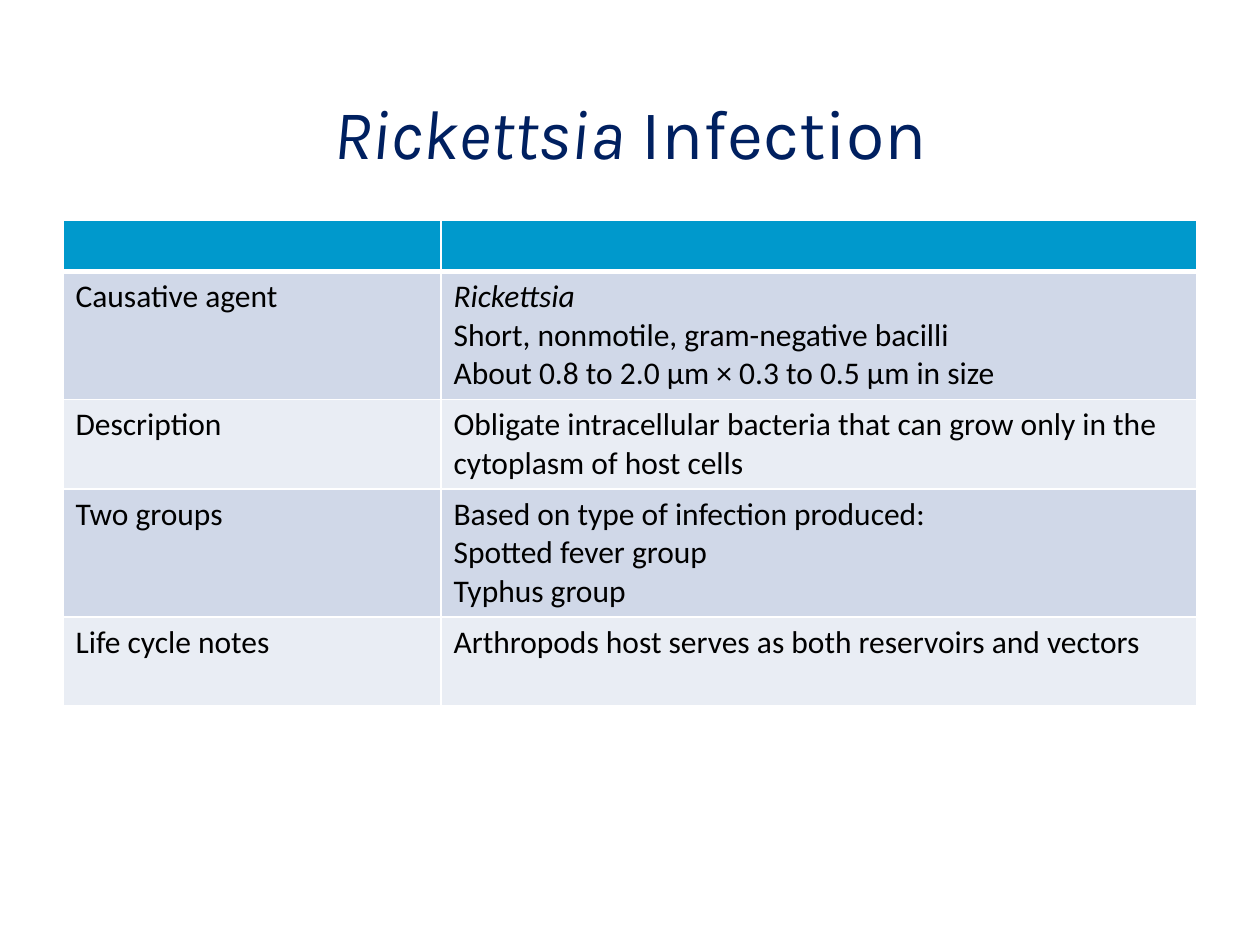
from dataclasses import dataclass

from lxml import etree
from pptx import Presentation
from pptx.dml.color import RGBColor
from pptx.enum import text
from pptx.oxml import ns
from pptx.util import Pt


@dataclass(frozen=True)
class Theme:
    title_font: str = "Karla"
    body_font: str = "Calibri"
    title_size: float = 40
    body_size: float = 18
    title_color: str = "002060"
    body_color: str = "000000"
    header_fill: str = "0099CC"
    band_fills: tuple[str, str] = ("D0D8E8", "E9EDF4")
    border_color: str = "FFFFFF"
    border_width: float = 1
    header_rule_width: float = 3


@dataclass(frozen=True)
class Fact:
    label: str
    lines: tuple[str, ...]
    height: float
    italic_first: bool = False


THEME = Theme()
HEADER_HEIGHT = 29.2
COLUMN_WIDTHS = (216, 432)
FACTS = (
    Fact("Causative agent",
         ("Rickettsia", "Short, nonmotile, gram-negative bacilli",
          "About 0.8 to 2.0 μm × 0.3 to 0.5 μm in size"), 72, italic_first=True),
    Fact("Description",
         ("Obligate intracellular bacteria that can grow only in the "
          "cytoplasm of host cells",), 50.4),
    Fact("Two groups",
         ("Based on type of infection produced:", "Spotted fever group",
          "Typhus group"), 72),
    Fact("Life cycle notes",
         ("Arthropods host serves as both reservoirs and vectors",), 50.4),
)


def style_font(font, name: str, size: float, color: str) -> None:
    font.name = name
    font.size = Pt(size)
    font.color.rgb = RGBColor.from_string(color)


def add_title(slide) -> None:
    title = slide.shapes.title
    title.left, title.top, title.width, title.height = Pt(54), Pt(0), Pt(612), Pt(150)
    title.text_frame.vertical_anchor = text.MSO_ANCHOR.MIDDLE
    paragraph = title.text_frame.paragraphs[0]
    paragraph.alignment = text.PP_ALIGN.CENTER
    for wording, italic in (("Rickettsia", True), (" Infection", False)):
        run = paragraph.add_run()
        run.text = wording
        run.font.italic = italic
    style_font(paragraph.font, THEME.title_font, THEME.title_size, THEME.title_color)
    for run in paragraph.runs:
        style_font(run.font, THEME.title_font, THEME.title_size, THEME.title_color)


def format_cell(cell, fill: str, top: float, bottom: float) -> None:
    properties = cell._tc.get_or_add_tcPr()
    side = THEME.border_width
    for tag, width in (("lnL", side), ("lnR", side), ("lnT", top), ("lnB", bottom)):
        line = etree.SubElement(properties, ns.qn(f"a:{tag}"), w=str(Pt(width)))
        solid = etree.SubElement(line, ns.qn("a:solidFill"))
        etree.SubElement(solid, ns.qn("a:srgbClr"), val=THEME.border_color)
    cell.fill.solid()
    cell.fill.fore_color.rgb = RGBColor.from_string(fill)


def write_cell(cell, lines: tuple[str, ...], italic_first: bool = False) -> None:
    cell.text = "\n".join(lines)
    for index, paragraph in enumerate(cell.text_frame.paragraphs):
        style_font(paragraph.font, THEME.body_font, THEME.body_size, THEME.body_color)
        for run in paragraph.runs:
            style_font(run.font, THEME.body_font, THEME.body_size, THEME.body_color)
            run.font.italic = italic_first and index == 0


def add_fact_table(slide, facts: tuple[Fact, ...]) -> None:
    heights = (HEADER_HEIGHT, *(fact.height for fact in facts))
    table = slide.shapes.add_table(
        len(heights), len(COLUMN_WIDTHS), Pt(36), Pt(126),
        Pt(sum(COLUMN_WIDTHS)), Pt(sum(heights))).table
    for column, width in zip(table.columns, COLUMN_WIDTHS):
        column.width = Pt(width)
    for index, (row, height) in enumerate(zip(table.rows, heights)):
        row.height = Pt(height)
        fill = THEME.band_fills[(index - 1) % 2] if index else THEME.header_fill
        top = THEME.header_rule_width if index == 1 else THEME.border_width
        bottom = THEME.header_rule_width if index == 0 else THEME.border_width
        for cell in row.cells:
            format_cell(cell, fill, top, bottom)
    for index, fact in enumerate(facts, start=1):
        write_cell(table.cell(index, 0), (fact.label,))
        write_cell(table.cell(index, 1), fact.lines, fact.italic_first)


def main() -> None:
    presentation = Presentation()
    presentation.slide_width, presentation.slide_height = Pt(720), Pt(540)
    slide = presentation.slides.add_slide(presentation.slide_layouts[5])
    add_title(slide)
    add_fact_table(slide, FACTS)
    presentation.save("out.pptx")


if __name__ == "__main__":
    main()
